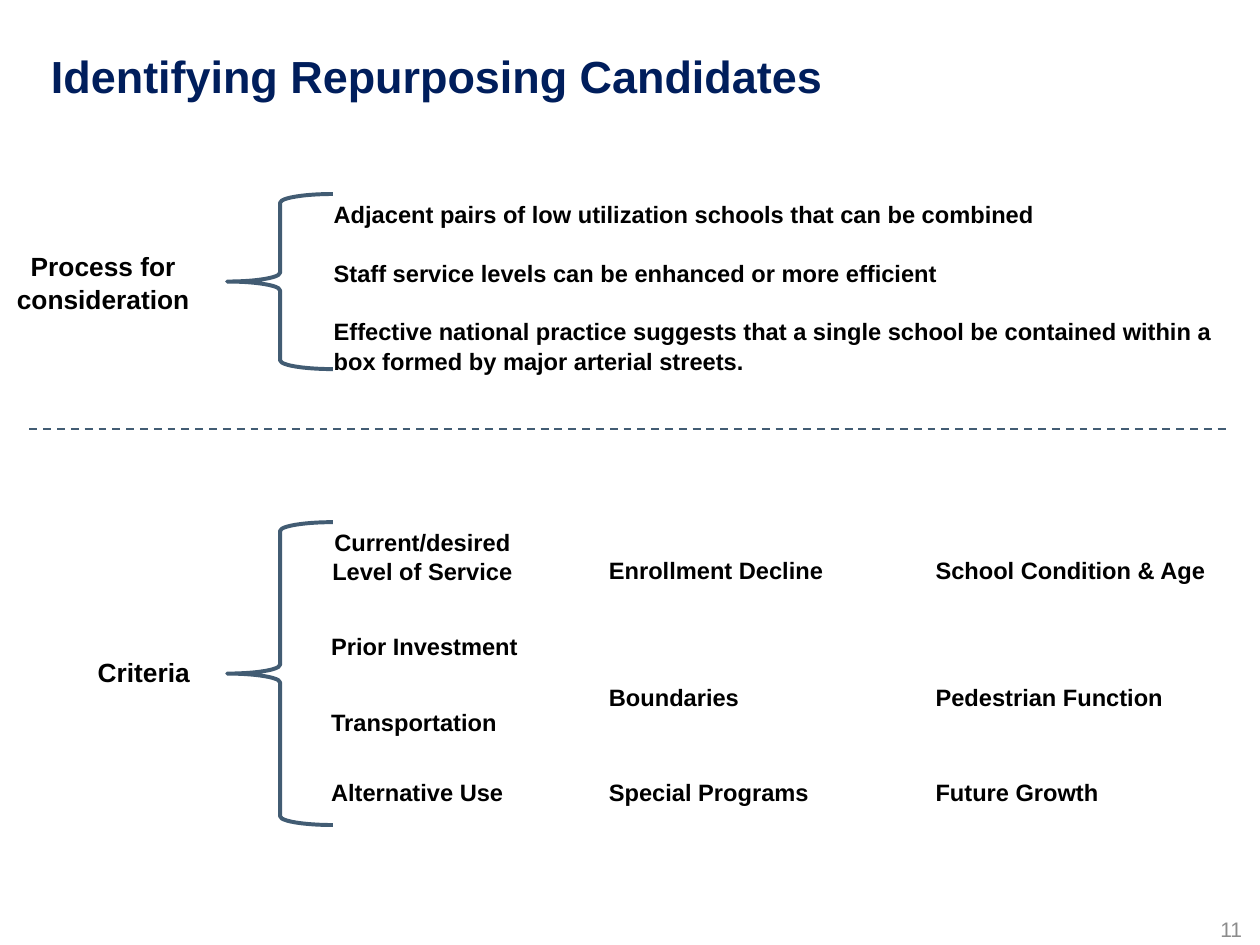
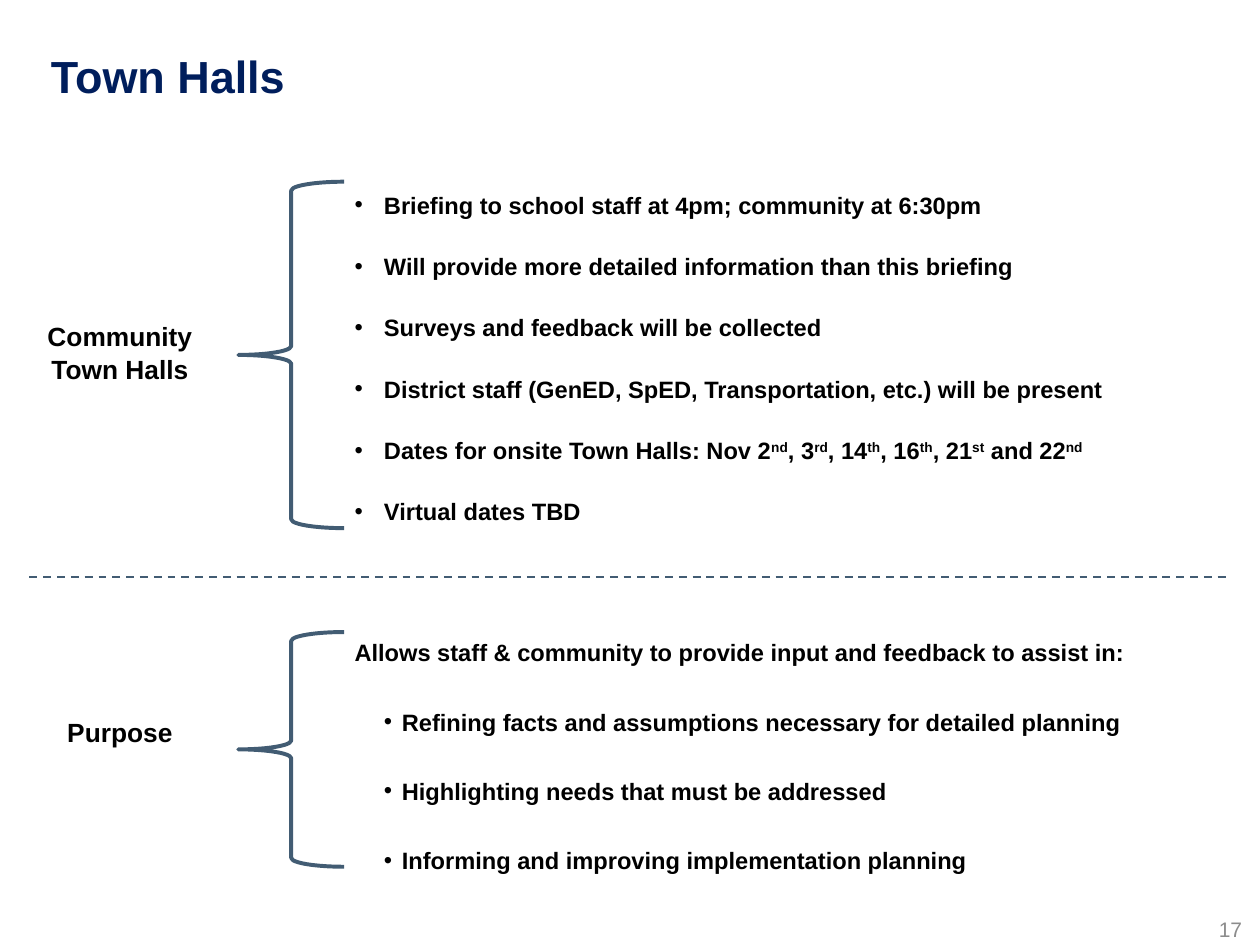
from lxml import etree
from pptx import Presentation, util as u
from pptx.dml.color import RGBColor
from pptx.enum import dml, shapes, text
from pptx.oxml.ns import qn

NAVY, SLATE, BLACK, GREY = "001E5C", "425C73", "000000", "8C8C8C"
LEFT, CENTER, RIGHT = text.PP_ALIGN.LEFT, text.PP_ALIGN.CENTER, text.PP_ALIGN.RIGHT


def color(hex_code):
    return RGBColor.from_string(hex_code)


class Deck:
    font = "Arial"
    line_spacing = 1.05
    label_width = 5.4

    def __init__(self):
        self.prs = Presentation()
        self.prs.slide_width = u.Cm(33.83)
        self.prs.slide_height = u.Cm(25.37)

    def new_slide(self, title, number):
        self.slide = self.prs.slides.add_slide(self.prs.slide_layouts[6])
        self.add_text([title], 1.12, 1.22, 31.57, 1.52, size=34.2, ink=NAVY, middle=True)
        page = self.add_text([str(number)], 26.06, 24.38, 7.62, 1.1, size=16,
                             ink=GREY, bold=False, align=RIGHT, middle=True)
        page.margin_right = u.Cm(0.33)

    def add_text(self, lines, left, top, width, height, size=18, ink=BLACK, bold=True,
                 align=LEFT, middle=False, after=0):
        box = self.slide.shapes.add_textbox(u.Cm(left), u.Cm(top), u.Cm(width), u.Cm(height))
        frame = box.text_frame
        frame.word_wrap = True
        frame.vertical_anchor = text.MSO_ANCHOR.MIDDLE if middle else text.MSO_ANCHOR.TOP
        frame.text = "\n".join(lines)
        for paragraph in frame.paragraphs:
            paragraph.alignment = align
            paragraph.line_spacing = self.line_spacing
            paragraph.space_after = u.Pt(after)
            self.raise_ordinals(paragraph)
            for run in paragraph.runs:
                run.font.name = self.font
                run.font.size = u.Pt(size)
                run.font.bold = bold
                run.font.color.rgb = color(ink)
        return frame

    def raise_ordinals(self, paragraph):
        parts = paragraph.text.split("^")
        paragraph.text = parts[0]
        for position, part in enumerate(parts[1:], 1):
            run = paragraph.add_run()
            run.text = part
            if position % 2:
                run.font._element.set("baseline", "30000")

    def bullet(self, paragraphs, indent, hanging, level=0):
        for paragraph in paragraphs:
            paragraph.level = level
            props = paragraph._p.get_or_add_pPr()
            props.set("marL", str(u.Cm(indent)))
            props.set("indent", str(-u.Cm(hanging)))
            etree.SubElement(props, qn("a:buFont")).set("typeface", self.font)
            etree.SubElement(props, qn("a:buChar")).set("char", "•")

    def label(self, lines, center, top):
        self.add_text(lines, center - self.label_width / 2, top, self.label_width,
                      0.25 + 0.86 * len(lines), size=20, align=CENTER)

    def brace(self, left, top, height):
        brace = self.slide.shapes.add_shape(
            shapes.MSO_SHAPE.LEFT_BRACE, u.Cm(left), u.Cm(top), u.Cm(2.84), u.Cm(height))
        brace.shadow.inherit = False
        brace.fill.background()
        brace.line.color.rgb = color(SLATE)
        brace.line.width = u.Pt(3)

    def divider(self, top):
        divider = self.slide.shapes.add_connector(
            shapes.MSO_CONNECTOR.STRAIGHT, u.Cm(0.79), u.Cm(top), u.Cm(33.02), u.Cm(top))
        divider.line.color.rgb = color(SLATE)
        divider.line.width = u.Pt(1.5)
        divider.line.dash_style = dml.MSO_LINE.DASH
        etree.SubElement(divider._element.spPr, qn("a:effectLst"))


def repurposing(deck):
    deck.new_slide("Identifying Repurposing Candidates", 11)
    deck.label(["Process for", "consideration"], 2.77, 6.55)
    deck.brace(6.1, 5.21, 4.7)
    deck.add_text([
        "Adjacent pairs of low utilization schools that can be combined",
        "Staff service levels can be enhanced or more efficient",
        "Effective national practice suggests that a single school be contained "
        "within a box formed by major arterial streets.",
    ], 8.71, 5.21, 24.31, 5.64, after=21.7)
    deck.divider(11.53)

    deck.label(["Criteria"], 3.86, 17.45)
    deck.brace(6.1, 14.02, 8.13)
    deck.add_text(["Current/desired", "Level of Service"], 8.64, 14, 5.4, 1.8, align=CENTER)
    top_row, middle_row, bottom_row = 14.76, 18.16, 20.73
    columns = [
        (8.64, [("Prior Investment", 16.81), ("Transportation", 18.85),
                ("Alternative Use", bottom_row)]),
        (16.1, [("Enrollment Decline", top_row), ("Boundaries", middle_row),
                ("Special Programs", bottom_row)]),
        (24.87, [("School Condition & Age", top_row), ("Pedestrian Function", middle_row),
                 ("Future Growth", bottom_row)]),
    ]
    for left, criteria in columns:
        for criterion, top in criteria:
            deck.add_text([criterion], left, top, 8.2 if left > 20 else 7.2, 1.02)


def town_halls(deck):
    deck.new_slide("Town Halls", 17)
    deck.label(["Community", "Town Halls"], 3.22, 8.43)
    deck.brace(6.4, 4.88, 9.3)
    logistics = deck.add_text([
        "Briefing to school staff at 4pm; community at 6:30pm",
        "Will provide more detailed information than this briefing",
        "Surveys and feedback will be collected",
        "District staff (GenED, SpED, Transportation, etc.) will be present",
        "Dates for onsite Town Halls: Nov 2^nd^, 3^rd^, 14^th^, 16^th^, 21^st^ and 22^nd",
        "Virtual dates TBD",
    ], 9.27, 4.95, 23.75, 9.14, after=24)
    deck.bullet(logistics.paragraphs, 0.79, 0.79)
    deck.divider(15.49)

    deck.label(["Purpose"], 3.22, 19.05)
    deck.brace(6.4, 16.97, 6.3)
    purpose = deck.add_text([
        "Allows staff & community to provide input and feedback to assist in:",
        "Refining facts and assumptions necessary for detailed planning",
        "Highlighting needs that must be addressed",
        "Informing and improving implementation planning",
    ], 9.27, 16.97, 23.75, 6.53, after=30)
    deck.bullet(purpose.paragraphs[1:], 1.27, 0.48, level=1)


def main():
    deck = Deck()
    repurposing(deck)
    town_halls(deck)
    deck.prs.save("out.pptx")


if __name__ == "__main__":
    main()
